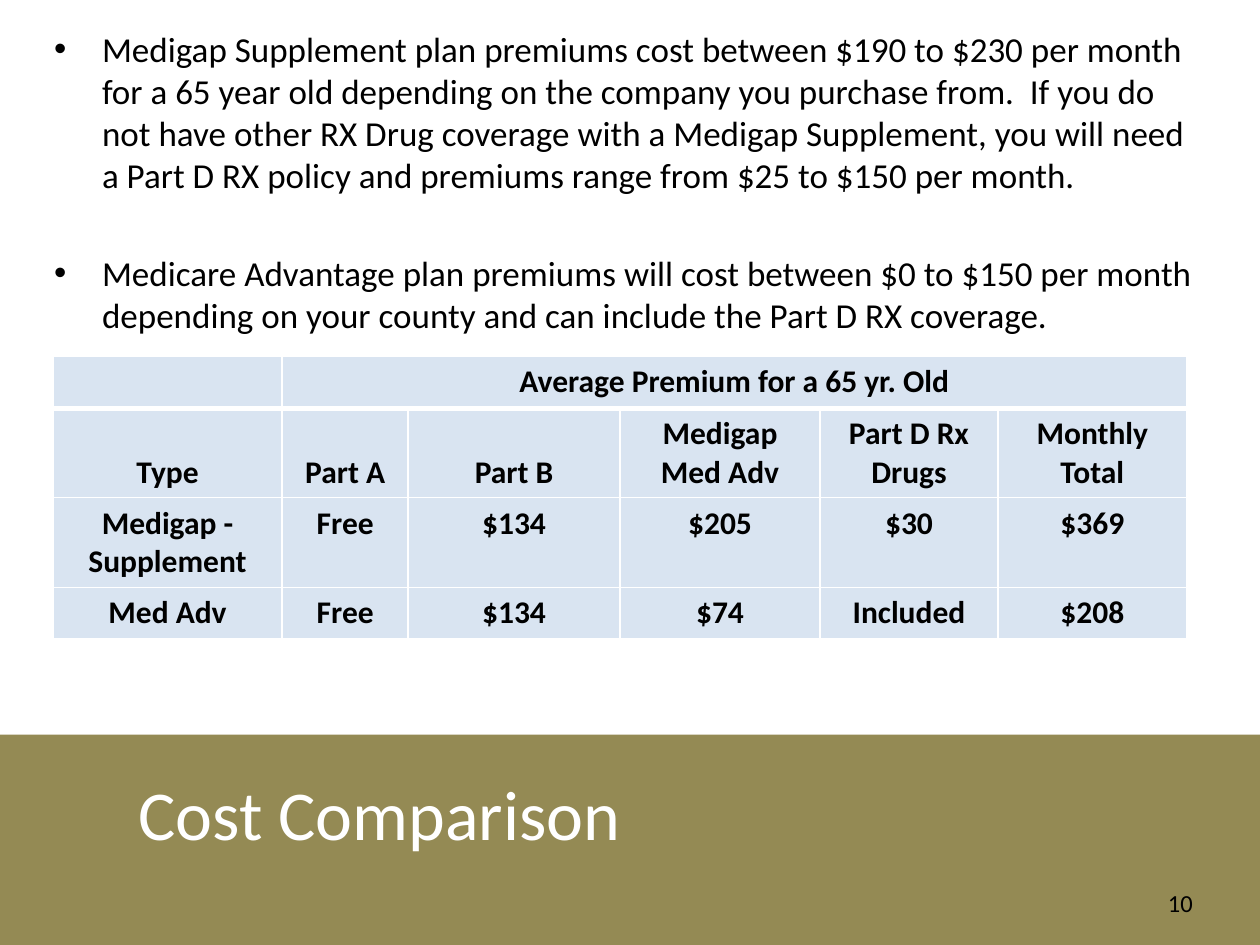
from lxml import etree
from pptx import Presentation
from pptx.dml.color import RGBColor
from pptx.enum.shapes import MSO_SHAPE
from pptx.enum.text import MSO_ANCHOR, MSO_AUTO_SIZE, PP_ALIGN
from pptx.oxml.ns import qn
from pptx.util import Inches, Pt

RECTANGLE = MSO_SHAPE.RECTANGLE
TOP, BOTTOM = MSO_ANCHOR.TOP, MSO_ANCHOR.BOTTOM
NO_AUTOFIT = MSO_AUTO_SIZE.NONE
LEFT, CENTER = PP_ALIGN.LEFT, PP_ALIGN.CENTER

FONT = "Calibri"
COLORS = {"band": "948A54", "cell": "4F81BD", "text": "000000", "light": "FFFFFF"}

POINTS = [
    "Medigap Supplement plan premiums cost between $190 to $230 per month "
    "for a 65 year old depending on the company you purchase from.  If you do "
    "not have other RX Drug coverage with a Medigap Supplement, you will need "
    "a Part D RX policy and premiums range from $25 to $150 per month.",
    "Medicare Advantage plan premiums will cost between $0 to $150 per month "
    "depending on your county and can include the Part D RX coverage.",
]
PREMIUMS = [
    ["", "Average Premium for a 65 yr. Old", "", "", "", ""],
    ["Type", "Part A", "Part B", "Medigap Med Adv", "Part D Rx Drugs", "Monthly\nTotal"],
    ["Medigap - Supplement", "Free", "$134", "$205", "$30", "$369"],
    ["Med Adv", "Free", "$134", "$74", "Included", "$208"],
]
COLUMN_WIDTHS = [1.82, 1, 1.68, 1.59, 1.41, 1.5]
ROW_HEIGHTS = [0.41, 0.7, 0.7, 0.41]
HEADER_ROW = 1


def place(part, box):
    part.left, part.top, part.width, part.height = (Inches(v) for v in box)


def add_run(paragraph, text, size, color, bold=False):
    run = paragraph.add_run()
    run.text = text
    run.font.name = FONT
    run.font.size = Pt(size)
    run.font.bold = bold
    run.font.color.rgb = RGBColor.from_string(COLORS[color])


def add_band(slide, box):
    band = slide.shapes.add_shape(RECTANGLE, *(Inches(v) for v in box))
    band.shadow.inherit = False
    band.fill.solid()
    band.fill.fore_color.rgb = RGBColor.from_string(COLORS["band"])
    band.line.fill.background()
    slide.shapes._spTree.insert(2, band._element)


def add_page_number(slide, box):
    number = slide.shapes.add_textbox(*(Inches(v) for v in box))
    number.text_frame.word_wrap = True
    add_run(number.text_frame.paragraphs[0], "10", 14, "text")


def fill_title(slide, box):
    title = slide.shapes.title
    place(title, box)
    frame = title.text_frame
    frame.auto_size = NO_AUTOFIT
    frame.vertical_anchor = BOTTOM
    frame.margin_left = Inches(1.1)
    frame.paragraphs[0].alignment = LEFT
    add_run(frame.paragraphs[0], "Cost Comparison", 40, "light")


def fill_points(slide, box):
    body = slide.placeholders[1]
    place(body, box)
    frame = body.text_frame
    frame.auto_size = NO_AUTOFIT
    frame.vertical_anchor = TOP
    for index, point in enumerate(POINTS):
        paragraph = frame.add_paragraph() if index else frame.paragraphs[0]
        paragraph.alignment = LEFT
        paragraph.space_before = Pt(32 if index else 4)
        properties = paragraph._p.get_or_add_pPr()
        properties.set("marL", str(Inches(0.38)))
        properties.set("indent", str(Inches(-0.38)))
        etree.SubElement(properties, qn("a:buFont"), typeface="Arial")
        etree.SubElement(properties, qn("a:buChar"), char="•")
        add_run(paragraph, point, 20, "text")


def style_cell(cell, bottom_width):
    cell.fill.solid()
    cell.fill.fore_color.rgb = RGBColor.from_string(COLORS["cell"])
    properties = cell._tc.get_or_add_tcPr()
    tint = properties.find(".//" + qn("a:srgbClr"))
    etree.SubElement(tint, qn("a:alpha"), val="21000")
    widths = {"a:lnL": 1, "a:lnR": 1, "a:lnT": 1, "a:lnB": bottom_width}
    for position, (side, width) in enumerate(widths.items()):
        border = etree.Element(qn(side), w=str(Pt(width)))
        fill = etree.SubElement(border, qn("a:solidFill"))
        etree.SubElement(fill, qn("a:srgbClr"), val=COLORS["light"])
        properties.insert(position, border)


def add_premium_table(slide, box):
    frame = slide.shapes.add_table(
        len(PREMIUMS), len(COLUMN_WIDTHS), *(Inches(v) for v in box))
    table = frame.table
    for column, width in zip(table.columns, COLUMN_WIDTHS):
        column.width = Inches(width)
    for row, height in zip(table.rows, ROW_HEIGHTS):
        row.height = Inches(height)
    table.cell(0, 1).merge(table.cell(0, len(COLUMN_WIDTHS) - 1))
    for r, labels in enumerate(PREMIUMS):
        for c, label in enumerate(labels):
            cell = table.cell(r, c)
            style_cell(cell, 1 if r else 3)
            cell.vertical_anchor = BOTTOM if r == HEADER_ROW else TOP
            if not label:
                continue
            for index, line in enumerate(label.split("\n")):
                text = cell.text_frame
                paragraph = text.add_paragraph() if index else text.paragraphs[0]
                paragraph.alignment = CENTER
                add_run(paragraph, line, 18, "text", bold=True)


def main():
    prs = Presentation()
    prs.slide_width, prs.slide_height = Inches(10), Inches(7.5)
    slide = prs.slides.add_slide(prs.slide_layouts[0])
    add_band(slide, (0, 5.83, 10, 1.67))
    fill_title(slide, (0, 5.58, 8.08, 1.25))
    fill_points(slide, (0.33, 0.17, 9.25, 5))
    add_premium_table(slide, (0.42, 2.83, 9, sum(ROW_HEIGHTS)))
    add_page_number(slide, (9.17, 7, 0.58, 0.34))
    prs.save("out.pptx")


if __name__ == "__main__":
    main()
